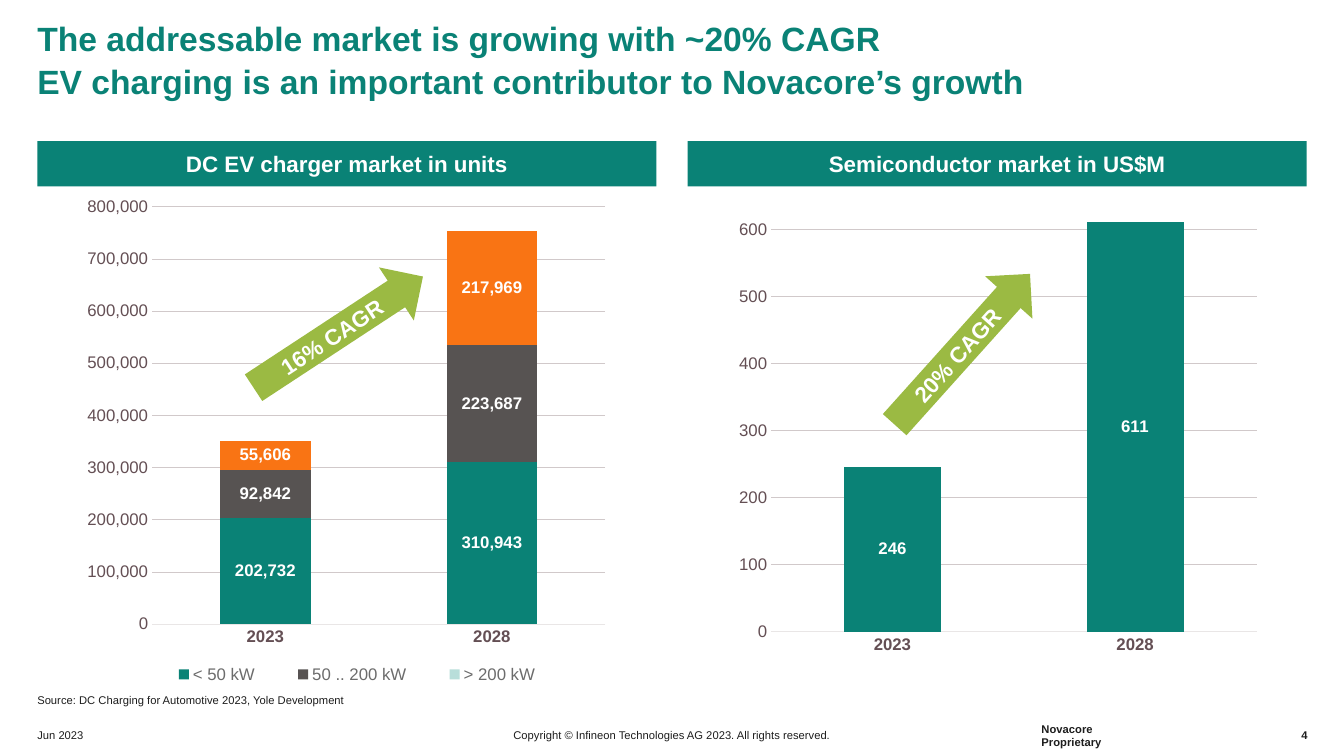
from lxml import etree
from pptx import Presentation
from pptx.chart.data import CategoryChartData
from pptx.dml.color import RGBColor
from pptx.enum import chart as ch, shapes, text
from pptx.oxml.ns import qn
from pptx.util import Inches, Pt

TEAL, GREEN, ORANGE, GREY = "0A8276", "9BBA43", "F97414", "575352"
INK, AXIS, GRID, WHITE = "1D1D1D", "644F54", "D1C9CA", "FFFFFF"
LEFT, CENTER, RIGHT = text.PP_ALIGN.LEFT, text.PP_ALIGN.CENTER, text.PP_ALIGN.RIGHT

TITLE = ("The addressable market is growing with ~20% CAGR\v"
         "EV charging is an important contributor to Novacore’s growth")
YEARS = ["2023", "2028"]

# Layouts are x, y, width, height as fractions of the chart
PANELS = [
    {"heading": "DC EV charger market in units", "left": 0.37,
     "chart": (0.76, 1.85, 5.35, 4.99), "plot": (0.14, 0.04, 0.84, 0.83),
     "legend": (0.12, 0.94, 0.8, 0.06), "max": 800000, "major": 100000,
     "series": [("< 50 kW", (202732, 310943), TEAL, None),
                ("50 .. 200 kW", (92842, 223687), GREY, None),
                ("> 200 kW", (55606, 217969), "B8DEDA", ORANGE)],
     "growth": ("16% CAGR", 2.35, 2.98, 326.7)},
    {"heading": "Semiconductor market in US$M", "left": 6.82,
     "chart": (7.22, 1.85, 5.35, 4.75), "plot": (0.08, 0.02, 0.9, 0.91),
     "legend": None, "max": 650, "major": 100,
     "series": [("Series 1", (246, 611), GREEN, TEAL)],
     "growth": ("20% CAGR", 8.54, 3.15, 311.9)},
]

# text, box, alignment, bold
SMALL_PRINT = [
    ("Source: DC Charging for Automotive 2023, Yole Development",
     (0.37, 6.88, 4.2, 0.13), LEFT, False),
    ("Jun 2023", (0.37, 7.1, 0.67, 0.39), LEFT, False),
    ("Copyright © Infineon Technologies AG 2023. All rights reserved.",
     (4.97, 7.1, 3.39, 0.39), CENTER, False),
    ("Novacore Proprietary", (10.33, 7.1, 1.06, 0.39), LEFT, True),
    ("4", (12.55, 7.1, 0.42, 0.39), RIGHT, True),
]


def rgb(color):
    return RGBColor.from_string(color)


def box(values):
    return [Inches(v) for v in values]


def style_font(font, size, color, bold=False):
    font.name, font.size, font.bold = "Arial", Pt(size), bold
    font.color.rgb = rgb(color)


def write(sp, content, size, color, bold=False, align=CENTER, inset=0,
          anchor=text.MSO_ANCHOR.MIDDLE, wrap=True):
    tf = sp.text_frame
    tf.text = content
    tf.word_wrap, tf.vertical_anchor = wrap, anchor
    tf.margin_left = tf.margin_right = Inches(inset)
    tf.margin_top = tf.margin_bottom = Inches(inset)
    p = tf.paragraphs[0]
    p.alignment = align
    for r in p.runs:
        style_font(r.font, size, color, bold)
    return p


def add_block(slide, kind, place, fill, label, inset=0):
    sp = slide.shapes.add_shape(kind, *box(place))
    sp.shadow.inherit = False
    sp.fill.solid()
    sp.fill.fore_color.rgb = rgb(fill)
    sp.line.fill.background()
    write(sp, label, 16, WHITE, True, inset=inset)
    return sp


def set_layout(element, place, inner=False):
    """Fix the place of a plot area or legend inside its chart."""
    for old in element.findall(qn("c:layout")):
        element.remove(old)
    layout = etree.Element(qn("c:layout"))
    manual = etree.SubElement(layout, qn("c:manualLayout"))
    settings = [("layoutTarget", "inner")] if inner else []
    settings += [("xMode", "edge"), ("yMode", "edge")]
    settings += list(zip("xywh", place))
    for tag, value in settings:
        etree.SubElement(manual, qn("c:" + tag)).set("val", str(value))
    position = element.find(qn("c:legendPos"))
    if position is None:
        element.insert(0, layout)
    else:
        position.addnext(layout)


def style_axes(chart, panel):
    cat, val = chart.category_axis, chart.value_axis
    for axis in (cat, val):
        axis.major_tick_mark = axis.minor_tick_mark = ch.XL_TICK_MARK.NONE
        style_font(axis.tick_labels.font, 12, AXIS, axis is cat)
    cat.format.line.color.rgb = rgb("E9E6E6")
    cat.format.line.width = Pt(0.25)
    val.format.line.fill.background()
    val.minimum_scale, val.maximum_scale = 0, panel["max"]
    val.major_unit = panel["major"]
    val.tick_labels.number_format = "#,##0"
    val.tick_labels.number_format_is_linked = False
    val.has_major_gridlines = True
    grid = val.major_gridlines.format.line
    grid.color.rgb, grid.width = rgb(GRID), Pt(0.25)


def add_market_chart(slide, panel):
    data = CategoryChartData(number_format="#,##0")
    data.categories = YEARS
    for name, values, _, _ in panel["series"]:
        data.add_series(name, values)
    chart = slide.shapes.add_chart(
        ch.XL_CHART_TYPE.COLUMN_STACKED, *box(panel["chart"]), data).chart
    style_font(chart.font, 10, INK)
    chart.has_title = False
    style_axes(chart, panel)

    plot = chart.plots[0]
    plot.gap_width, plot.overlap, plot.vary_by_categories = 150, 100, False
    for series, (_, values, color, bar_color) in zip(plot.series, panel["series"]):
        series.format.fill.solid()
        series.format.fill.fore_color.rgb = rgb(color)
        if bar_color:
            for i in range(len(values)):
                fill = series.points[i].format.fill
                fill.solid()
                fill.fore_color.rgb = rgb(bar_color)
        labels = series.data_labels
        labels.show_value = True
        labels.position = ch.XL_LABEL_POSITION.CENTER
        labels.number_format, labels.number_format_is_linked = "#,##0", False
        style_font(labels.font, 12, WHITE, True)

    set_layout(chart.plots[0]._element.getparent(), panel["plot"], inner=True)
    chart.has_legend = panel["legend"] is not None
    if chart.has_legend:
        legend = chart.legend
        legend.position = ch.XL_LEGEND_POSITION.BOTTOM
        legend.include_in_layout = False
        style_font(legend.font, 12, "6C6C6C")
        set_layout(legend._element, panel["legend"])


def main():
    prs = Presentation()
    prs.slide_width, prs.slide_height = Inches(13.33), Inches(7.5)
    slide = prs.slides.add_slide(prs.slide_layouts[5])

    title = slide.shapes.title
    title.left, title.top, title.width, title.height = box((0.37, 0.21, 11.18, 0.79))
    p = write(title, TITLE, 24, TEAL, True, LEFT, anchor=text.MSO_ANCHOR.BOTTOM)
    title.text_frame.auto_size = text.MSO_AUTO_SIZE.NONE
    p.line_spacing = 1.05

    for panel in PANELS:
        add_market_chart(slide, panel)
        add_block(slide, shapes.MSO_SHAPE.RECTANGLE,
                  (panel["left"], 1.4, 6.14, 0.45), TEAL, panel["heading"])
        label, x, y, angle = panel["growth"]
        arrow = add_block(slide, shapes.MSO_SHAPE.RIGHT_ARROW,
                          (x, y, 2.01, 0.63), GREEN, label, inset=0.08)
        arrow.rotation = angle

    for content, place, align, bold in SMALL_PRINT:
        sp = slide.shapes.add_textbox(*box(place))
        write(sp, content, 8, INK, bold, align, wrap=False)

    prs.save("out.pptx")


if __name__ == "__main__":
    main()
